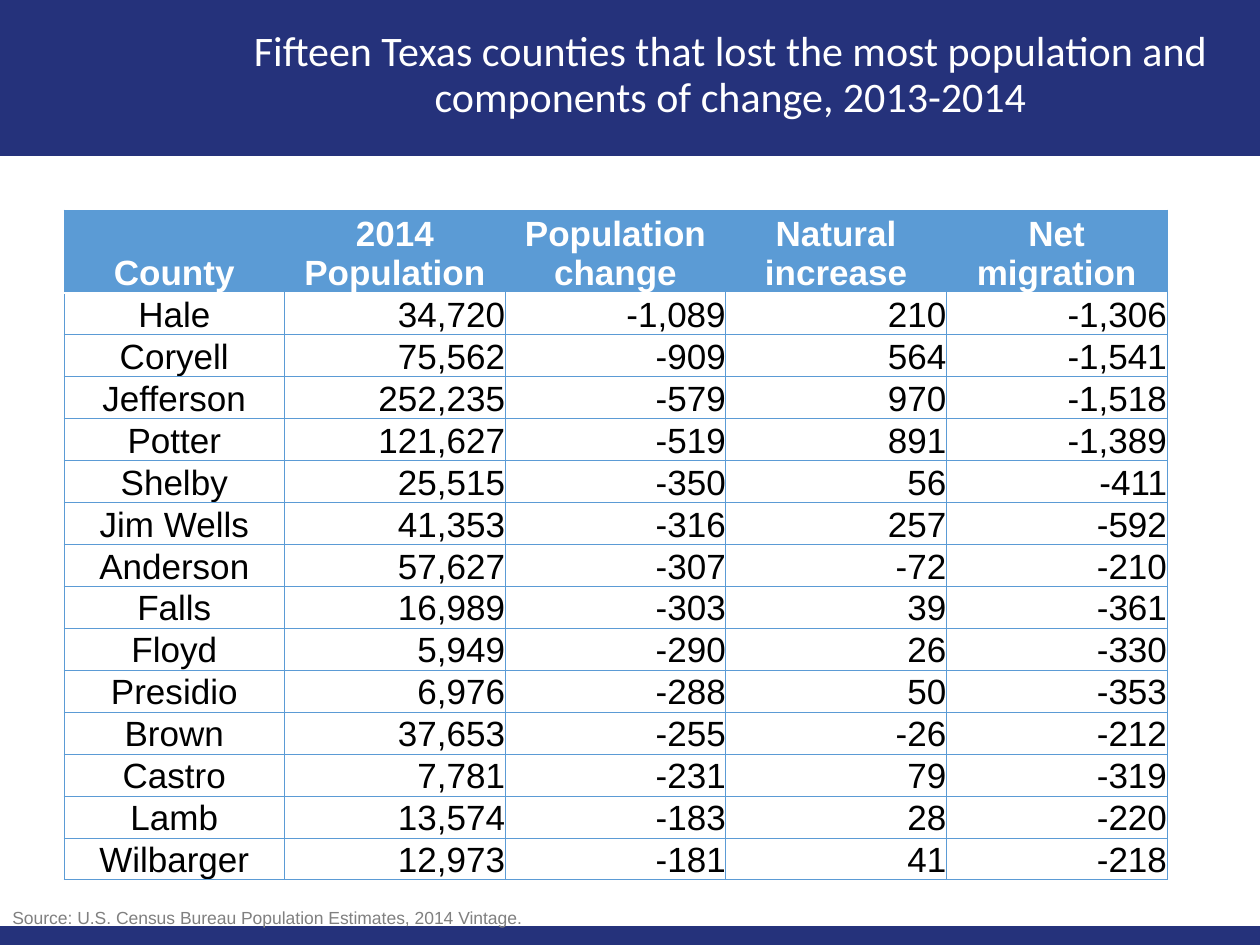
from lxml.etree import SubElement
from pptx import Presentation
from pptx.dml.color import RGBColor
from pptx.enum.shapes import MSO_SHAPE as Preset
from pptx.enum.text import MSO_ANCHOR as Anchor, MSO_AUTO_SIZE as AutoSize, PP_ALIGN as Align
from pptx.oxml.ns import qn
from pptx.util import Emu, Pt

EMU_PER_PX = 914400 / 126
WIDTH, HEIGHT = 1260, 945
NAVY, BLUE, GREY, WHITE, BLACK = "25327B", "5B9BD5", "808080", "FFFFFF", "000000"

TITLE = "Fifteen Texas counties that lost the most population and components of change, 2013-2014"
SOURCE = "Source: U.S. Census Bureau Population Estimates, 2014 Vintage."
ROWS = [
    ("County", "2014 Population", "Population change", "Natural increase", "Net migration"),
    ("Hale", "34,720", "-1,089", "210", "-1,306"),
    ("Coryell", "75,562", "-909", "564", "-1,541"),
    ("Jefferson", "252,235", "-579", "970", "-1,518"),
    ("Potter", "121,627", "-519", "891", "-1,389"),
    ("Shelby", "25,515", "-350", "56", "-411"),
    ("Jim Wells", "41,353", "-316", "257", "-592"),
    ("Anderson", "57,627", "-307", "-72", "-210"),
    ("Falls", "16,989", "-303", "39", "-361"),
    ("Floyd", "5,949", "-290", "26", "-330"),
    ("Presidio", "6,976", "-288", "50", "-353"),
    ("Brown", "37,653", "-255", "-26", "-212"),
    ("Castro", "7,781", "-231", "79", "-319"),
    ("Lamb", "13,574", "-183", "28", "-220"),
    ("Wilbarger", "12,973", "-181", "41", "-218"),
]


def px(length):
    return Emu(round(length * EMU_PER_PX))


def place(box):
    return [px(length) for length in box]


def color(hex_string):
    return RGBColor.from_string(hex_string)


def set_all(target, values):
    for name, value in values.items():
        setattr(target, name, value)


def write(text_frame, text, size, font_color, font="Arial", bold=False, **paragraph_format):
    paragraph = text_frame.paragraphs[0]
    run = paragraph.add_run()
    run.text = text
    set_all(paragraph, paragraph_format)
    set_all(run.font, {"name": font, "size": Pt(size), "bold": bold})
    run.font.color.rgb = color(font_color)


def add_band(slide, box):
    band = slide.shapes.add_shape(Preset.RECTANGLE, *place(box))
    band.shadow.inherit = False
    band.fill.solid()
    band.fill.fore_color.rgb = color(NAVY)
    band.line.fill.background()


def add_title(slide, box):
    title = slide.shapes.title
    set_all(title, dict(zip(("left", "top", "width", "height"), place(box))))
    set_all(title.text_frame, {"word_wrap": True, "auto_size": AutoSize.NONE,
                               "vertical_anchor": Anchor.MIDDLE})
    write(title.text_frame, TITLE, 24, WHITE, "Calibri",
          alignment=Align.CENTER, line_spacing=0.9)
    # The title is drawn above the band
    slide.shapes._spTree.append(title._element)


def add_border(cell, side, line_color, points):
    """Draw one side (L, R, T or B) of a cell; no line if the colour is None."""
    line = SubElement(cell._tc.get_or_add_tcPr(), qn(f"a:ln{side}"), w=str(Pt(points)))
    if line_color is None:
        SubElement(line, qn("a:noFill"))
    else:
        SubElement(SubElement(line, qn("a:solidFill")), qn("a:srgbClr"), val=line_color)


def cell_borders(row, column, last_column):
    """Colour and width in points of each side, in schema order."""
    thin, white, none = (BLUE, 0.5), (WHITE, 1), (None, 0)
    header = row == 0
    return {
        "L": none if header and column > 0 else thin,
        "R": none if header and column < last_column else thin,
        "T": white if row == 1 else thin,
        "B": white if header else thin,
    }


def add_county_table(slide, box, header_height):
    left, top, width, height = box
    row_count, column_count = len(ROWS), len(ROWS[0])
    table = slide.shapes.add_table(row_count, column_count, *place(box)).table
    table.horz_banding = False
    for column in table.columns:
        column.width = px(width / column_count)
    for index, row in enumerate(table.rows):
        row.height = px((height - header_height) / (row_count - 1) if index else header_height)

    margins = {f"margin_{side}": 0 for side in ("left", "right", "top", "bottom")}
    for row, values in enumerate(ROWS):
        header = row == 0
        for column, value in enumerate(values):
            cell = table.cell(row, column)
            set_all(cell, {**margins, "vertical_anchor": Anchor.BOTTOM})
            for side, border in cell_borders(row, column, column_count - 1).items():
                add_border(cell, side, *border)
            cell.fill.solid()
            cell.fill.fore_color.rgb = color(BLUE if header else WHITE)
            write(cell.text_frame, value, 20, WHITE if header else BLACK, bold=header,
                  alignment=Align.CENTER if header or column == 0 else Align.RIGHT)


def add_source(slide, box):
    text_frame = slide.shapes.add_textbox(*place(box)).text_frame
    set_all(text_frame, {"word_wrap": False, "auto_size": AutoSize.SHAPE_TO_FIT_TEXT})
    write(text_frame, SOURCE, 10, GREY)


def main():
    presentation = Presentation()
    set_all(presentation, {"slide_width": px(WIDTH), "slide_height": px(HEIGHT)})
    slide = presentation.slides.add_slide(presentation.slide_layouts[5])
    add_band(slide, (0, 0, WIDTH, 156))
    add_band(slide, (0, 926, WIDTH, 19))
    add_county_table(slide, (64, 210, 1103, 670), header_height=83)
    add_source(slide, (0, 901, 553, 34))
    add_title(slide, (214, 13, 1033, 126))
    presentation.save("out.pptx")


if __name__ == "__main__":
    main()
